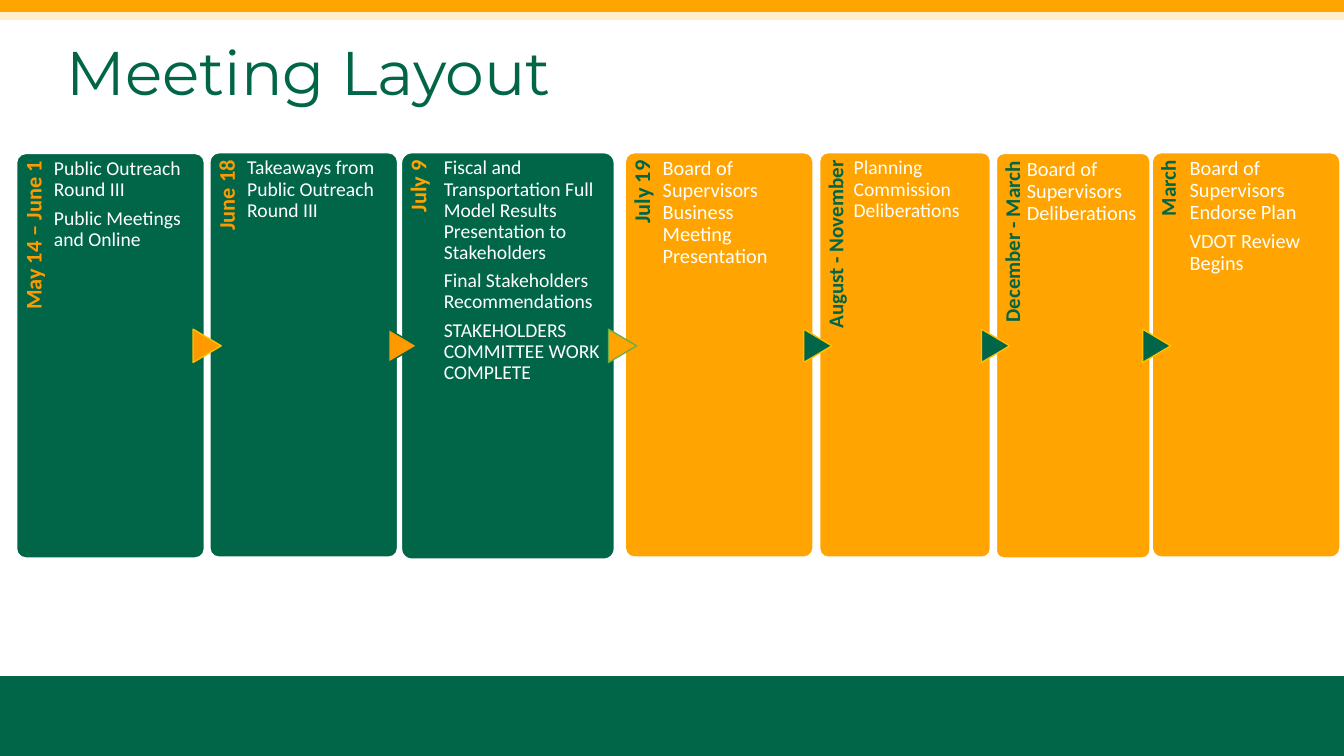
import pptx
import pptx.util
import pptx.dml.color
import pptx.enum.shapes
import pptx.enum.text
from pptx.util import Cm, Pt

SHAPE = pptx.enum.shapes.MSO_SHAPE
ALIGN = pptx.enum.text.PP_ALIGN
ANCHOR = pptx.enum.text.MSO_ANCHOR

COLORS = {
    "green": "006647", "amber": "FFA400", "orange": "FF9900", "cream": "FFEDCC",
    "gold": "FFC000", "leaf": "70AD47", "white": "FFFFFF",
}
WIDTH, HEIGHT = 33.87, 19.05

# box (cm), card colour, date, date size and colour, text size, paragraphs,
# arrow (offset from the card's left edge, fill, line)
STAGES = [
    ((0.41, 3.86, 4.75, 10.21), "green", "May 14 – June 1", 16, "orange", 14,
     ["Public Outreach Round III", "Public Meetings and Online"], None),
    ((5.28, 3.84, 4.75, 10.21), "green", "June 18", 16, "orange", 14,
     ["Takeaways from Public Outreach Round III"], (-0.48, "orange", "gold")),
    ((10.11, 3.84, 5.38, 10.26), "green", "July 9", 16, "amber", 14,
     ["Fiscal and Transportation Full Model Results Presentation to Stakeholders",
      "Final Stakeholders Recommendations",
      "STAKEHOLDERS COMMITTEE WORK COMPLETE"], (-0.38, "orange", "green")),
    ((15.75, 3.84, 4.75, 10.21), "amber", "July 19", 16, "green", 14.5,
     ["Board of Supervisors Business Meeting Presentation"],
     (-0.48, "amber", "leaf")),
    ((20.65, 3.84, 4.32, 10.21), "amber", "August - November", 15, "green", 14,
     ["Planning Commission Deliberations"], (-0.46, "green", "gold")),
    ((25.1, 3.86, 3.89, 10.21), "amber", "December - March", 15, "green", 14.5,
     ["Board of Supervisors Deliberations"], (-0.43, "green", "gold")),
    ((29.03, 3.84, 4.75, 10.21), "amber", "March", 15, "green", 14.5,
     ["Board of Supervisors Endorse Plan", "VDOT Review Begins"],
     (-0.3, "green", "gold")),
]


def rgb(name):
    return pptx.dml.color.RGBColor.from_string(COLORS[name])


def add_shape(s, kind, box, fill, line=None, weight=1):
    sp = s.shapes.add_shape(kind, *map(Cm, box))
    sp.shadow.inherit = False
    sp.fill.solid()
    sp.fill.fore_color.rgb = rgb(fill)
    if line:
        sp.line.color.rgb = rgb(line)
        sp.line.width = Pt(weight)
    else:
        sp.line.fill.background()
    return sp


def add_text(s, box, texts, size, color, font="Calibri", bold=False,
             align=ALIGN.LEFT, anchor=ANCHOR.TOP, insets=(0, 0.14, 0, 0)):
    sp = s.shapes.add_textbox(*map(Cm, box))
    tf = sp.text_frame
    tf.word_wrap = True
    tf.vertical_anchor = anchor
    tf.margin_left, tf.margin_top, tf.margin_right, tf.margin_bottom = map(Cm, insets)
    for i, text in enumerate(texts):
        p = tf.add_paragraph() if i else tf.paragraphs[0]
        p.alignment = align
        p.line_spacing = 0.9
        p.space_after = Pt(round(size * 0.35))
        r = p.add_run()
        r.text = text
        r.font.size = Pt(size)
        r.font.name = font
        r.font.bold = bold
        r.font.color.rgb = rgb(color)
    return sp


def add_bands(s, box):
    x, y, w, h = box
    add_shape(s, SHAPE.RECTANGLE, (x, y, w, 0.5), "cream")
    add_shape(s, SHAPE.RECTANGLE, (x, y + h - 2.01, w, 2.01), "green")
    add_shape(s, SHAPE.RECTANGLE, (x, y, w, 0.3), "amber")


def add_title(s, box):
    add_text(s, box, ["Meeting Layout"], 44, "green", font="Montserrat",
             anchor=ANCHOR.MIDDLE, insets=(0.25, 0.13, 0.25, 0.13))


def add_stage(s, box, fill, date, date_size, date_color, size, texts, arrow):
    x, y, w, h = box
    card = add_shape(s, SHAPE.ROUNDED_RECTANGLE, box, fill, "white", 1.5)
    card.adjustments[0] = 0.05

    # Date strip: the left fifth of the card, turned to read upwards
    strip, length = 0.2 * w, 0.82 * h
    label = add_text(s, (x + (strip - length) / 2, y + (length - strip) / 2, length, strip),
                     [date], date_size, date_color, bold=True, align=ALIGN.RIGHT,
                     insets=(0, 0.15, 0.2, 0))
    label.rotation = 270

    # Arrow from the stage before
    if arrow:
        offset, arrow_fill, arrow_line = arrow
        sp = add_shape(s, SHAPE.FLOWCHART_EXTRACT, (x + offset, 8.36, 0.84, 0.71),
                       arrow_fill, arrow_line)
        sp.rotation = 90

    # Meetings
    add_text(s, (x + strip, y, 0.745 * w, h), texts, size, "white")


def main():
    prs = pptx.Presentation()
    prs.slide_width, prs.slide_height = Cm(WIDTH), Cm(HEIGHT)
    s = prs.slides.add_slide(prs.slide_layouts[6])
    add_bands(s, (0, 0, WIDTH, HEIGHT))
    add_title(s, (1.42, 0.53, 29.21, 2.77))
    for stage in STAGES:
        add_stage(s, *stage)
    prs.save("out.pptx")


if __name__ == "__main__":
    main()
